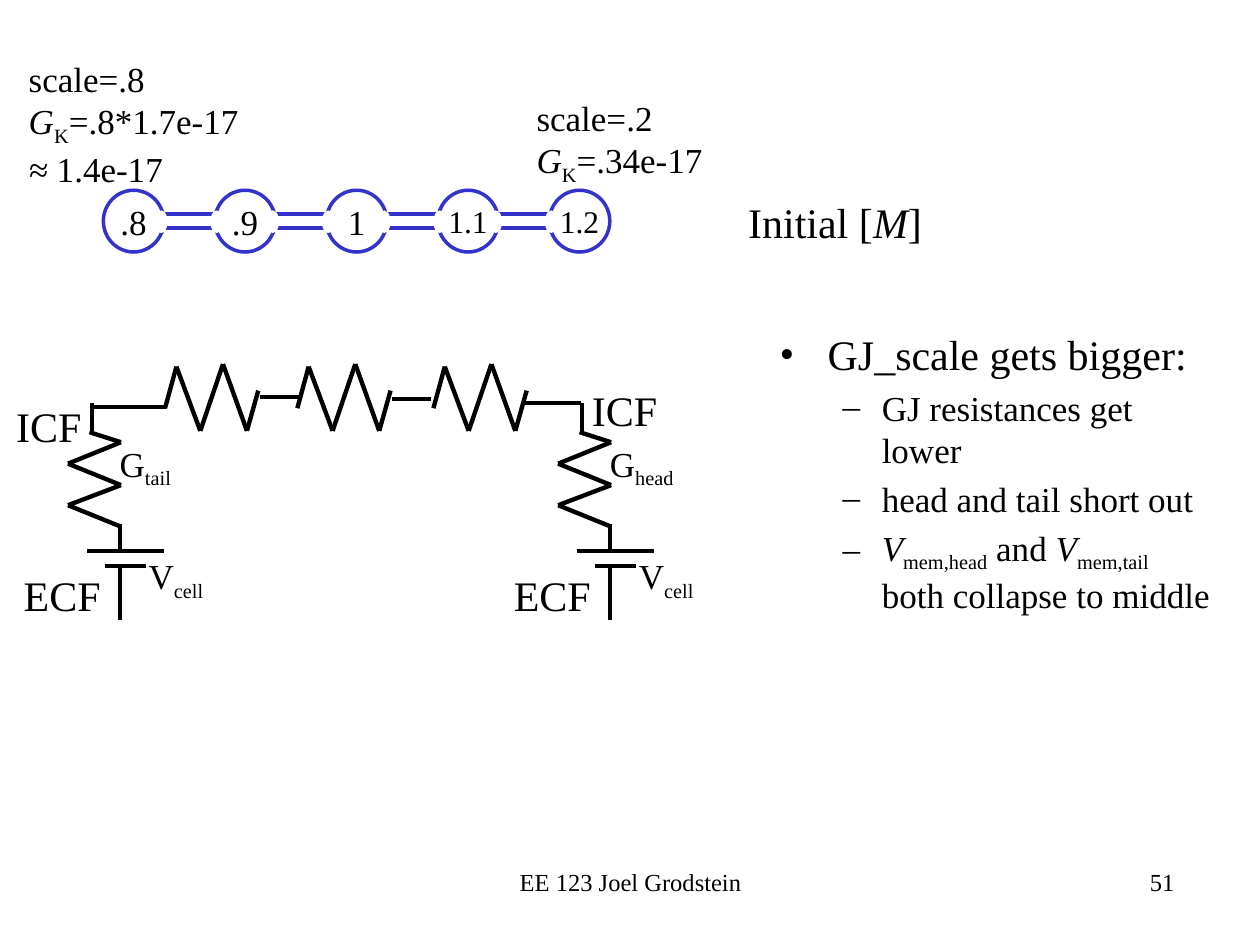
from pptx import Presentation
from pptx.dml.color import RGBColor
from pptx.enum.shapes import MSO_CONNECTOR, MSO_SHAPE
from pptx.enum.text import MSO_ANCHOR, PP_ALIGN
from pptx.oxml.ns import qn
from pptx.util import Inches, Pt
from lxml import etree

COLORS = {"ink": "000000", "cell": "3333CC", "paper": "FFFFFF"}
FONT = "Times New Roman"
NO_INSETS = dict.fromkeys(
    ("margin_left", "margin_top", "margin_right", "margin_bottom"), 0)
LABEL = {**NO_INSETS, "word_wrap": False}
CENTERED = {**NO_INSETS, "vertical_anchor": MSO_ANCHOR.MIDDLE}
ITALIC, SUB = "italic", "sub"
CELL_STEP = 0.885


class SlideBuilder:
    """Holds the style, the slide and the shape collection being filled."""

    def __init__(self, slide):
        self.slide = slide
        self.shapes = slide.shapes

    def color(self, name):
        return RGBColor.from_string(COLORS[name])

    def open_group(self):
        self.shapes = self.slide.shapes.add_group_shape().shapes

    def close_group(self):
        self.shapes = self.slide.shapes

    def fill_paragraph(self, p, runs, size, **fmt):
        """Runs are plain strings or (string, style) pairs."""
        for name, value in fmt.items():
            setattr(p, name, value)
        for item in [runs] if isinstance(runs, str) else runs:
            text, style = (item, None) if isinstance(item, str) else item
            r = p.add_run()
            r.text = text
            font = {"name": FONT, "size": Pt(size), "italic": style == ITALIC}
            for name, value in font.items():
                setattr(r.font, name, value)
            r.font.color.rgb = self.color("ink")
            if style == SUB:
                r.font._element.set("baseline", "-25000")

    def bullet(self, p, char, left, hanging):
        pPr = p._p.get_or_add_pPr()
        pPr.set("marL", str(Inches(left)))
        pPr.set("indent", str(-Inches(hanging)))
        etree.SubElement(pPr, qn("a:buFont")).set("typeface", FONT)
        etree.SubElement(pPr, qn("a:buChar")).set("char", char)

    def text(self, x, y, w, h, paragraphs, size, frame=None, **fmt):
        sp = self.shapes.add_textbox(Inches(x), Inches(y), Inches(w), Inches(h))
        tf = sp.text_frame
        for name, value in {"word_wrap": True, **(frame or {})}.items():
            setattr(tf, name, value)
        for i, runs in enumerate(paragraphs):
            p = tf.paragraphs[0] if i == 0 else tf.add_paragraph()
            self.fill_paragraph(p, runs, size, **fmt)
        return tf

    def shape(self, kind, x, y, w, h, fill=None, line=None):
        sp = self.shapes.add_shape(kind, Inches(x), Inches(y), Inches(w), Inches(h))
        sp.shadow.inherit = False
        if fill:
            sp.fill.solid()
            sp.fill.fore_color.rgb = self.color(fill)
        else:
            sp.fill.background()
        if line:
            sp.line.color.rgb = self.color(line)
            sp.line.width = Pt(2)
        else:
            sp.line.fill.background()
        return sp

    def cell(self, x, label, size):
        sp = self.shape(MSO_SHAPE.OVAL, x, 1.51, 0.48, 0.49, line="cell")
        for name, value in CENTERED.items():
            setattr(sp.text_frame, name, value)
        self.fill_paragraph(sp.text_frame.paragraphs[0], label, size,
                            alignment=PP_ALIGN.CENTER)

    def line(self, start, end, width=2.25):
        c = self.shapes.add_connector(
            MSO_CONNECTOR.STRAIGHT, *(Inches(v) for v in (*start, *end)))
        c.line.color.rgb = self.color("ink")
        c.line.width = Pt(width)
        etree.SubElement(c._element.spPr, qn("a:effectLst"))

    def zigzag(self, points):
        for start, end in zip(points, points[1:]):
            self.line(start, end, 2.5)

    def branch(self, dx, name, icf_at):
        """Resistor and battery between ICF and ECF, shifted right by dx."""
        self.open_group()
        for x1, y1, x2, y2 in [
            (0.69, 4.37, 1.3, 4.37), (0.83, 4.49, 1.16, 4.49),    # plates
            (0.95, 4.5, 0.95, 4.92), (0.95, 4.16, 0.95, 4.38),    # leads
            (0.73, 3.2, 0.73, 3.42),
        ]:
            self.line((x1 + dx, y1), (x2 + dx, y2))
        self.zigzag([(x + dx, y) for x, y in [
            (0.71, 3.43), (0.96, 3.51), (0.54, 3.68),
            (0.96, 3.85), (0.54, 4.01), (0.96, 4.18)]])
        self.text(1.18 + dx, 4.4, 0.5, 0.34, [["V", ("cell", SUB)]], 20, LABEL)
        self.text(0.95 + dx, 3.51, 0.6, 0.34, [["G", (name, SUB)]], 20, LABEL)
        self.text(0.09 + dx, 4.47, 0.87, 0.5, ["ECF"], 24)
        self.text(*icf_at, 0.87, 0.5, ["ICF"], 24)
        self.close_group()


def main():
    prs = Presentation()
    prs.slide_width, prs.slide_height = Inches(10), Inches(7.5)
    s = SlideBuilder(prs.slides.add_slide(prs.slide_layouts[6]))

    # Footer
    s.text(6.25, 6.83, 3.17, 0.5, ["51"], 14, alignment=PP_ALIGN.RIGHT)
    s.text(3.42, 6.83, 3.17, 0.34, ["EE 123 Joel Grodstein"], 14,
           alignment=PP_ALIGN.CENTER)

    # Row of cells
    cells = [(".8", 20), (".9", 20), ("1", 20), ("1.1", 18), ("1.2", 18)]
    for i, (label, size) in enumerate(cells):
        s.cell(0.82 + CELL_STEP * i, label, size)

    # Gap junctions, with narrow ovals opening the cell walls beside the labels
    for i in range(len(cells) - 1):
        dx = CELL_STEP * i
        s.shape(MSO_SHAPE.RECTANGLE, 1.28 + dx, 1.7, 0.44, 0.11, "paper", "cell")
        for x in (1.23, 1.67):
            s.shape(MSO_SHAPE.OVAL, x + dx, 1.67, 0.1, 0.18, "paper")

    # Captions of the row
    g_k = [("G", ITALIC), ("K", SUB)]
    s.text(5.84, 1.51, 1.7, 0.5, [["Initial [", ("M", ITALIC), "]"]], 24)
    s.text(0.13, 0.41, 1.96, 1.11,
           ["scale=.8", g_k + ["=.8*1.7e-17"], [("≈ ", ITALIC), "1.4e-17"]], 20)
    s.text(4.16, 0.72, 1.62, 0.77, ["scale=.2", g_k + ["=.34e-17"]], 20)

    # Bullets
    tf = s.text(6.09, 2.56, 3.67, 2.65, ["GJ_scale gets bigger:"], 24,
                space_before=Pt(4.8))
    s.bullet(tf.paragraphs[0], "•", 0.38, 0.38)
    v = ("V", ITALIC)
    for runs in [
        "GJ resistances get lower",
        "head and tail short out",
        [v, ("mem,head", SUB), " and ", v, ("mem,tail", SUB),
         " both collapse to middle"],
    ]:
        p = tf.add_paragraph()
        s.fill_paragraph(p, runs, 20, level=1, space_before=Pt(4))
        s.bullet(p, "–", 0.81, 0.31)

    # Tail and head branches
    s.branch(0, "tail", (0.03, 3.13))
    s.branch(3.89, "head", (4.6, 3))

    # Gap junction resistors
    for x in (1.31, 2.36, 3.44):
        s.open_group()
        s.zigzag([(x, 3.24), (x + 0.09, 2.91), (x + 0.28, 3.42),
                  (x + 0.46, 2.89), (x + 0.65, 3.42), (x + 0.74, 3.1)])
        s.close_group()

    # Wires between resistors
    for x1, x2, y in [(0.73, 1.32, 3.23), (2.06, 2.38, 3.15),
                      (3.11, 3.42, 3.17), (4.17, 4.61, 3.2)]:
        s.line((x1, y), (x2, y))

    prs.save("out.pptx")


if __name__ == "__main__":
    main()
